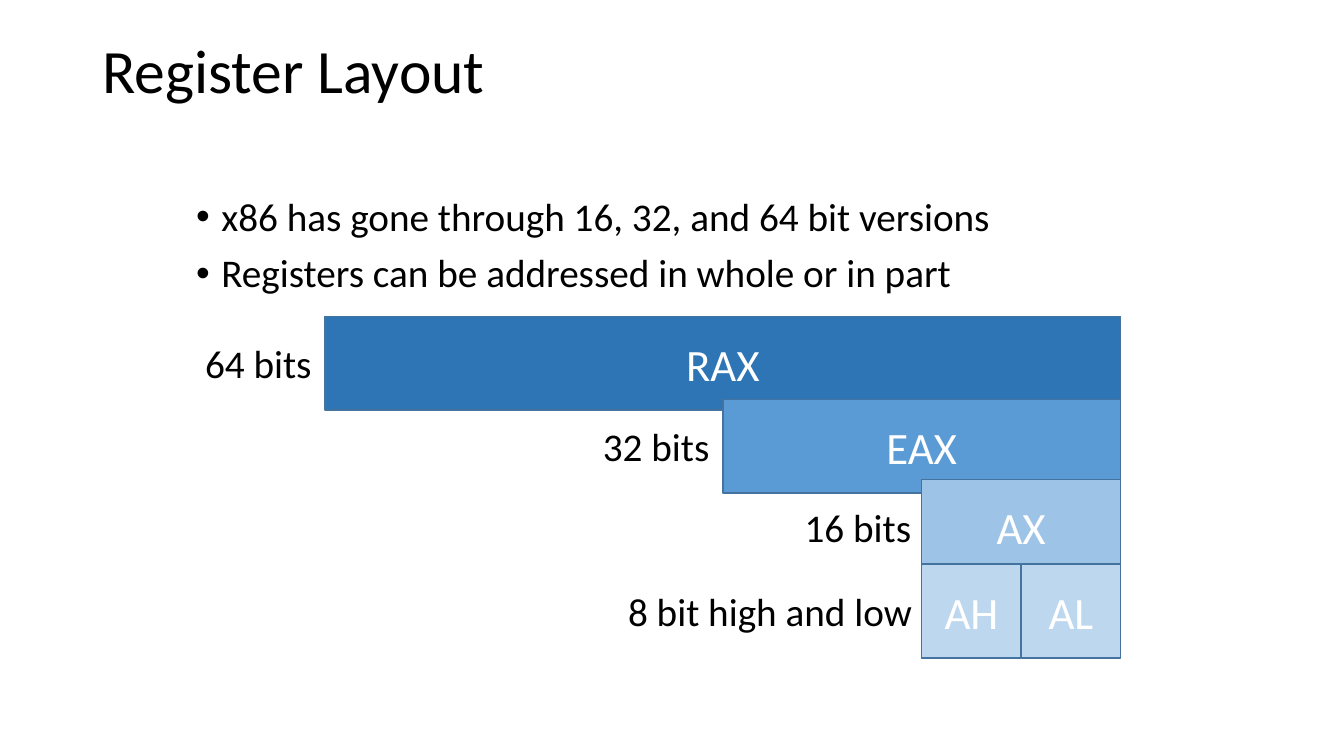
from dataclasses import dataclass

from lxml import etree
from pptx import Presentation
from pptx.dml.color import RGBColor
from pptx.enum.shapes import MSO_SHAPE
from pptx.enum.text import MSO_ANCHOR, PP_ALIGN
from pptx.oxml.ns import qn
from pptx.util import Pt

RECT = MSO_SHAPE.RECTANGLE
MIDDLE, TOP = MSO_ANCHOR.MIDDLE, MSO_ANCHOR.TOP
LEFT, CENTER, RIGHT = PP_ALIGN.LEFT, PP_ALIGN.CENTER, PP_ALIGN.RIGHT


@dataclass(frozen=True)
class Theme:
    font: str = "Calibri"
    text: str = "000000"
    box_text: str = "FFFFFF"
    border: str = "43739E"
    blues: tuple = ("2E75B6", "5B9BD5", "9DC3E6", "BDD7EE")
    title: int = 44
    body: int = 28
    register: int = 32


class Deck:
    """Holds the theme and the slide being drawn; lengths are in points."""

    def __init__(self, prs, theme):
        self.theme = theme
        self.s = prs.slides.add_slide(prs.slide_layouts[6])

    def add_text(self, p, text, size, color, **paragraph_format):
        for name, value in paragraph_format.items():
            setattr(p, name, value)
        r = p.add_run()
        r.text = text
        r.font.color.rgb = RGBColor.from_string(color)
        for name, value in {"name": self.theme.font, "size": Pt(size)}.items():
            setattr(r.font, name, value)

    def frame(self, x, y, w, h, anchor=MIDDLE, wrap=True):
        tf = self.s.shapes.add_textbox(Pt(x), Pt(y), Pt(w), Pt(h)).text_frame
        for name, value in {"word_wrap": wrap, "vertical_anchor": anchor}.items():
            setattr(tf, name, value)
        return tf

    def title(self, text, *box):
        tf = self.frame(*box)
        self.add_text(tf.paragraphs[0], text, self.theme.title, self.theme.text,
                      line_spacing=0.9, alignment=LEFT)

    def bullets(self, items, *box, indent=18, gap=10):
        tf = self.frame(*box)
        for i, item in enumerate(items):
            p = tf.add_paragraph() if i else tf.paragraphs[0]
            pPr = p._p.get_or_add_pPr()
            pPr.set("marL", str(Pt(indent)))
            pPr.set("indent", str(-Pt(indent)))
            etree.SubElement(pPr, qn("a:buFont"), typeface="Arial")
            etree.SubElement(pPr, qn("a:buChar"), char="•")
            self.add_text(p, item, self.theme.body, self.theme.text,
                          line_spacing=0.9, space_before=Pt(gap if i else 0))

    def label(self, text, right, y, w, h=41):
        tf = self.frame(right - w, y, w, h, TOP, wrap=False)
        self.add_text(tf.paragraphs[0], text, self.theme.body, self.theme.text,
                      alignment=RIGHT)

    def register(self, name, fill, x, y, w, h):
        sp = self.s.shapes.add_shape(RECT, Pt(x), Pt(y), Pt(w), Pt(h))
        sp.shadow.inherit = False
        sp.fill.solid()
        sp.fill.fore_color.rgb = RGBColor.from_string(fill)
        sp.line.color.rgb = RGBColor.from_string(self.theme.border)
        sp.line.width = Pt(1)
        tf = sp.text_frame
        tf.vertical_anchor = MIDDLE
        self.add_text(tf.paragraphs[0], name, self.theme.register,
                      self.theme.box_text, alignment=CENTER)


def main():
    prs = Presentation()
    prs.slide_width, prs.slide_height = Pt(960), Pt(540)
    theme = Theme()
    deck = Deck(prs, theme)

    deck.title("Register Layout", 66, 0, 828, 104.4)
    deck.bullets(["x86 has gone through 16, 32, and 64 bit versions",
                  "Registers can be addressed in whole or in part"],
                 133, 112.5, 687.5, 127.5)

    # Each row ends at the same right edge, and its width follows its bits.
    right_edge, bit_width, height = 800.5, 8.88, 67
    rows = [  # registers, bits each, top, label, label width, label gap
        (["RAX"], 64, 226, "64 bits", 91.5, 2.5),
        (["EAX"], 32, 285.25, "32 bits", 91.5, 2.5),
        (["AX"], 16, 342.75, "16 bits", 91.5, 0.5),
        (["AH", "AL"], 8, 403, "8 bit high and low", 236, 0),
    ]
    for fill, (names, bits, top, text, label_width, gap) in zip(theme.blues, rows):
        width = bits * bit_width
        left = right_edge - len(names) * width
        for i, name in enumerate(names):
            deck.register(name, fill, left + i * width, top, width, height)
        deck.label(text, left - gap, top + 13, label_width)

    prs.save("out.pptx")


if __name__ == "__main__":
    main()
